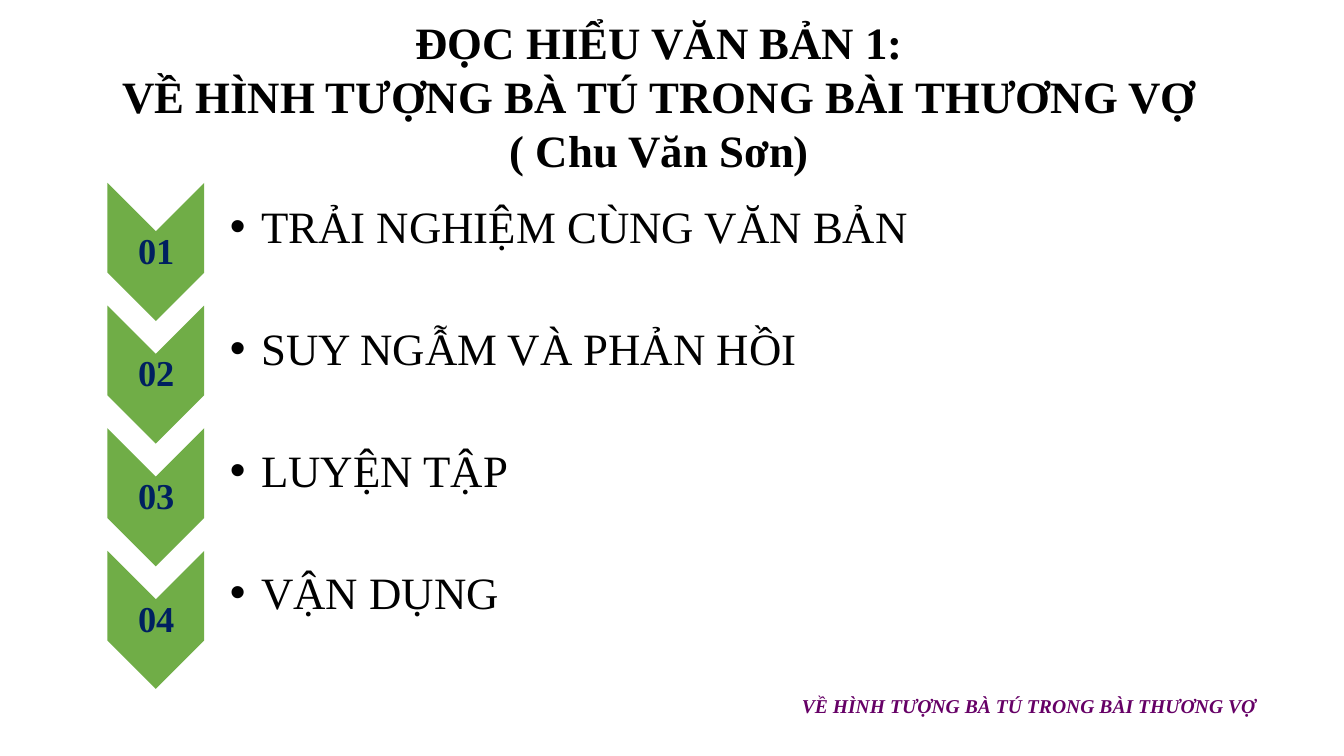
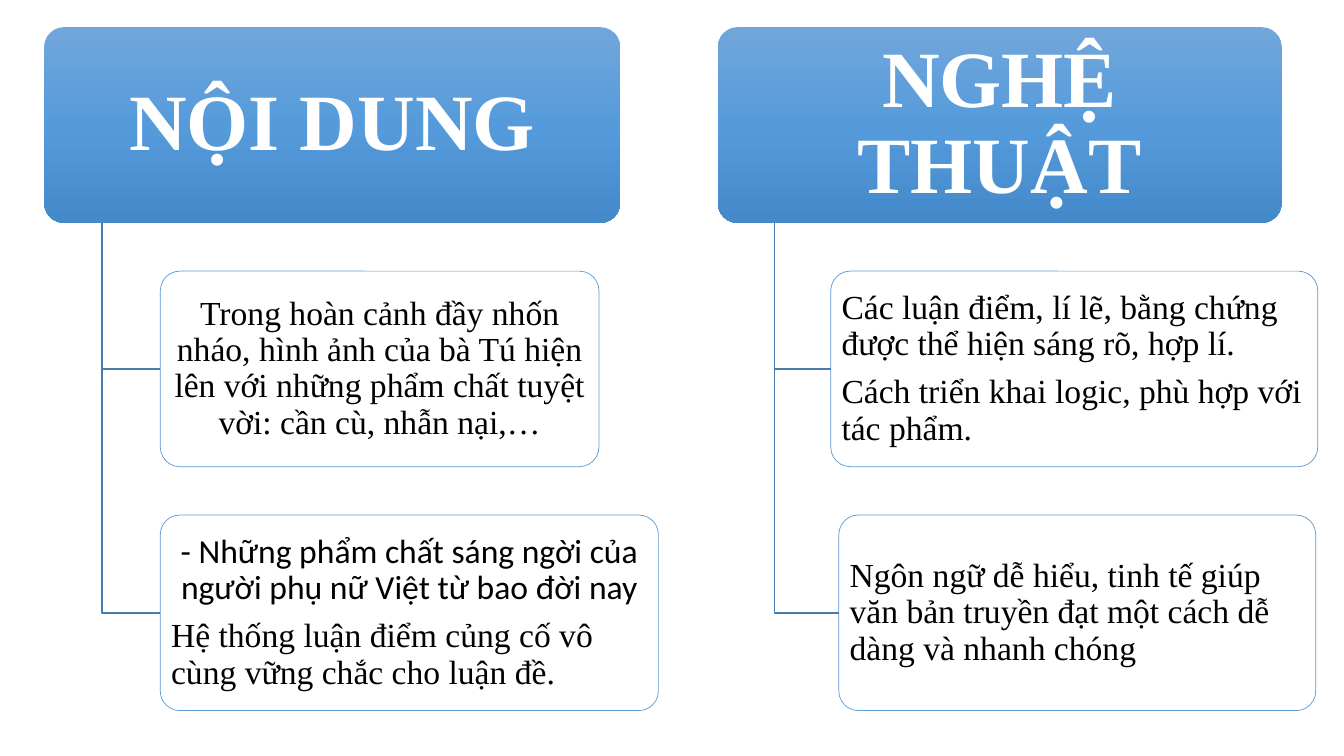
"""Build a two-slide Vietnamese lesson deck: an agenda and a summary tree."""
from copy import deepcopy

from pptx import Presentation
from pptx.dml.color import RGBColor
from pptx.enum.shapes import MSO_SHAPE
from pptx.enum.text import MSO_ANCHOR, MSO_AUTO_SIZE, PP_ALIGN
from pptx.oxml.ns import qn
from pptx.util import Inches, Pt

CHEVRON, ROUNDED = MSO_SHAPE.CHEVRON, MSO_SHAPE.ROUNDED_RECTANGLE
PANEL = MSO_SHAPE.ROUND_2_SAME_RECTANGLE
NO_FIT = MSO_AUTO_SIZE.NONE
LEFT, CENTER = PP_ALIGN.LEFT, PP_ALIGN.CENTER
TOP, MIDDLE = MSO_ANCHOR.TOP, MSO_ANCHOR.MIDDLE

SERIF, SANS = "Times New Roman", "Calibri"
GREEN, NAVY, PURPLE = "70AD47", "002060", "660066"
BLACK, WHITE, BORDER, TREE = "000000", "FFFFFF", "5B9BD5", "497CAB"
GRADIENT = [(0, "71A6DB"), (0.5, "559BDB"), (1, "448ACA")]
rgb = RGBColor.from_string


def write(sp, lines, size, color=BLACK, inset=(0.1, 0.05), anchor=MIDDLE, spacing=0.9, after=0, **font):
    """Fill a shape with (text, alignment, typeface) paragraphs."""
    tf = sp.text_frame
    frame = {"word_wrap": True, "auto_size": NO_FIT, "vertical_anchor": anchor,
             "margin_left": Inches(inset[0]), "margin_right": Inches(inset[0]),
             "margin_top": Inches(inset[1]), "margin_bottom": Inches(inset[1])}
    for key, value in frame.items():
        setattr(tf, key, value)
    for i, (text, align, face) in enumerate(lines):
        p = tf.add_paragraph() if i else tf.paragraphs[0]
        layout = {"alignment": align, "line_spacing": spacing,
                  "space_before": Pt(0), "space_after": Pt(after)}
        for key, value in layout.items():
            setattr(p, key, value)
        r = p.add_run()
        r.text = text
        r.font.color.rgb = rgb(color)
        for key, value in {"name": face, "size": Pt(size), **font}.items():
            setattr(r.font, key, value)


def place(sp, left, top, width, height):
    """Move and size a shape in inches."""
    for key, value in {"left": left, "top": top, "width": width, "height": height}.items():
        setattr(sp, key, Inches(value))
    return sp


prs = Presentation()
prs.slide_width, prs.slide_height = Inches(13.33), Inches(7.5)

s = prs.slides.add_slide(prs.slide_layouts[1])
LESSON = "VỀ HÌNH TƯỢNG BÀ TÚ TRONG BÀI THƯƠNG VỢ"
heading = ["ĐỌC HIỂU VĂN BẢN 1:", LESSON, "( Chu Văn Sơn)"]
write(place(s.shapes.title, 1.07, 0.09, 10.94, 1.72),
      [(line, CENTER, SERIF) for line in heading], 32, spacing=1, bold=True)

agenda = ["TRẢI NGHIỆM CÙNG VĂN BẢN", "SUY NGẪM VÀ PHẢN HỒI", "LUYỆN TẬP", "VẬN DỤNG"]
STEP = 3.65 / 3
body = place(s.placeholders[1], 2.03, 2.03, 10.52, 4.6)
write(body, [(item, LEFT, SERIF) for item in agenda], 32, inset=(0.25, 0),
      anchor=TOP, after=52.6)
for p in body.text_frame.paragraphs:
    pPr = p._p.get_or_add_pPr()
    pPr.set("marL", str(Inches(0.31)))
    pPr.set("indent", str(-Inches(0.31)))

for i in range(len(agenda)):
    for kind, color, box in [(CHEVRON, GREEN, (0.86, 2.02, 1.37, 0.96)),
                             (PANEL, WHITE, (6.86, -3.01, 0.89, 10.56))]:
        left, top, width, height = box
        sp = place(s.shapes.add_shape(kind, 0, 0, 0, 0), left, top + i * STEP, width, height)
        sp.rotation = 90
        sp.shadow.inherit = False
        sp.fill.solid()
        sp.fill.fore_color.rgb = rgb(color)
        sp.line.fill.background()
        if kind == PANEL:
            s.shapes._spTree.insert(2, sp._element)
    number = place(s.shapes.add_textbox(0, 0, 0, 0), 1.07, 2.3 + i * STEP, 0.96, 0.41)
    write(number, [(f"{i + 1:02}", CENTER, SERIF)], 26, NAVY, (0.02, 0.02), bold=True)

footer = place(s.shapes.add_textbox(0, 0, 0, 0), 7.75, 6.83, 4.91, 0.34)
write(footer, [(LESSON, CENTER, SERIF)], 14, PURPLE, spacing=1, bold=True, italic=True)

s = prs.slides.add_slide(prs.slide_layouts[6])
ROW_TOP, ROW_STEP, ROW_HEIGHT = 0.27, 2.42, 1.94
branches = [
    ("NỘI DUNG", 0.44, 5.71, [
        (1.59, 4.35, [("Trong hoàn cảnh đầy nhốn nháo, hình ảnh của bà Tú hiện lên với "
                       "những phẩm chất tuyệt vời: cần cù, nhẫn nại,…", CENTER, SERIF)]),
        (1.59, 4.94, [("- Những phẩm chất sáng ngời của người phụ nữ Việt từ bao đời nay",
                       CENTER, SANS),
                      ("Hệ thống luận điểm củng cố vô cùng vững chắc cho luận đề.",
                       LEFT, SERIF)])]),
    ("NGHỆ THUẬT", 7.12, 5.59, [
        (8.24, 4.83, [("Các luận điểm, lí lẽ, bằng chứng được thể hiện sáng rõ, hợp lí.",
                       LEFT, SERIF),
                      ("Cách triển khai logic, phù hợp với tác phẩm.", LEFT, SERIF)]),
        (8.32, 4.73, [("Ngôn ngữ dễ hiểu, tinh tế giúp văn bản truyền đạt một cách dễ dàng "
                       "và nhanh chóng", LEFT, SERIF)])]),
]
for name, left, width, points in branches:
    head = place(s.shapes.add_shape(ROUNDED, 0, 0, 0, 0), left, ROW_TOP, width, ROW_HEIGHT)
    head.adjustments[0] = 0.1
    head.shadow.inherit = False
    head.line.fill.background()
    head.fill.gradient()
    stops = head._element.spPr.find(".//" + qn("a:gsLst"))
    stops.append(deepcopy(stops[0]))
    for stop, (position, color) in zip(head.fill.gradient_stops, GRADIENT):
        stop.position = position
        stop.color.rgb = rgb(color)
    head.fill.gradient_angle = 270
    write(head, [(name, CENTER, SERIF)], 57, WHITE, (0.12, 0.08), bold=True)

    trunk = Inches(round(left + width / 10 + 0.004, 2))
    for row, (box_left, box_width, text) in enumerate(points, 1):
        box = place(s.shapes.add_shape(ROUNDED, 0, 0, 0, 0),
                    box_left, ROW_TOP + row * ROW_STEP, box_width, ROW_HEIGHT)
        box.adjustments[0] = 0.1
        box.shadow.inherit = False
        box.fill.solid()
        box.fill.fore_color.rgb = rgb(WHITE)
        box.line.color.rgb = rgb(BORDER)
        box.line.width = Pt(0.5)
        write(box, text, 24, inset=(0.05, 0.03), after=8.4)
        middle = box.top + box.height // 2
        elbow = s.shapes.build_freeform(trunk, head.top + head.height)
        elbow.add_line_segments([(trunk, middle), (box.left, middle)], close=False)
        twig = elbow.convert_to_shape()
        twig.shadow.inherit = False
        twig.fill.background()
        twig.line.color.rgb = rgb(TREE)
        twig.line.width = Pt(1)

prs.save("out.pptx")
